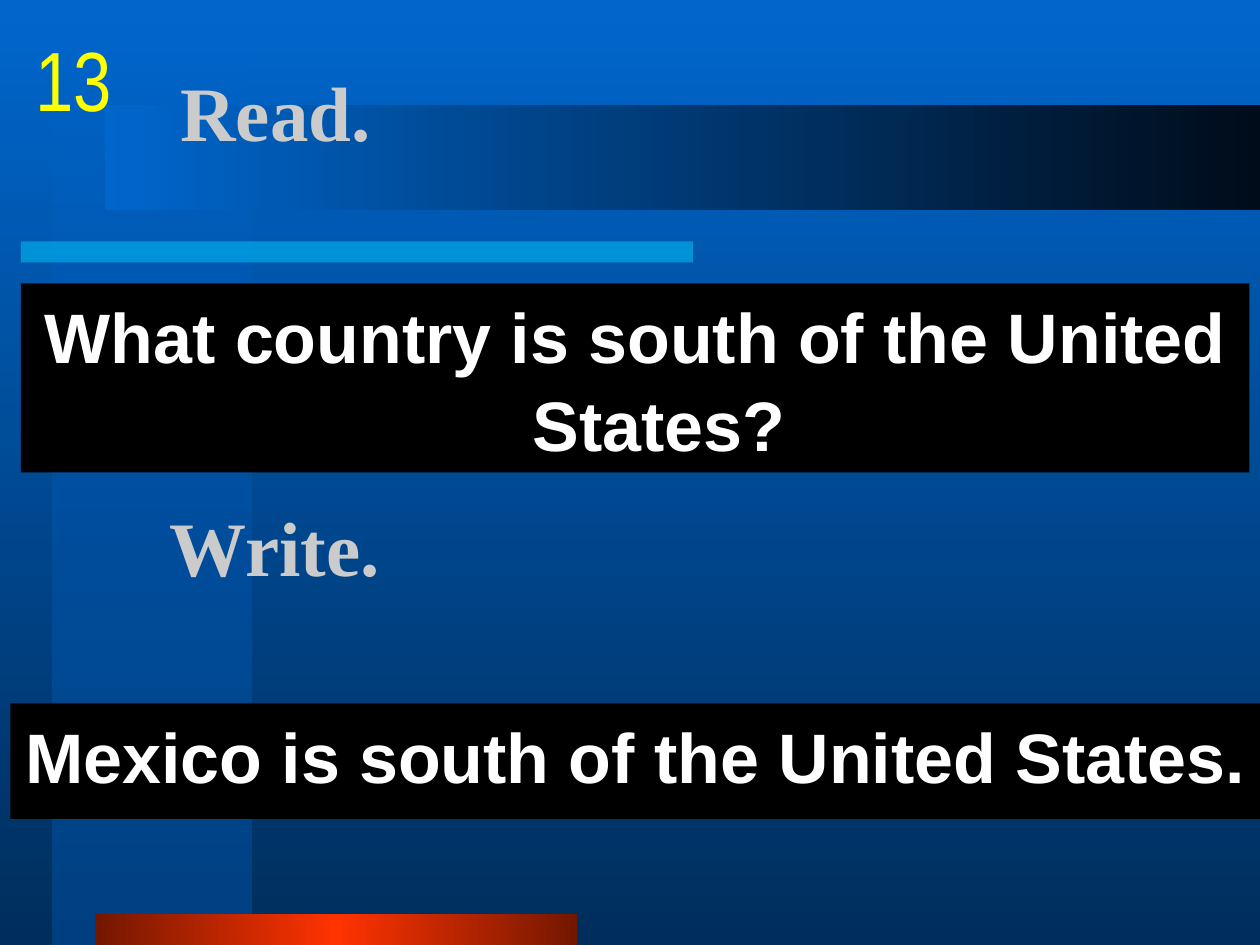
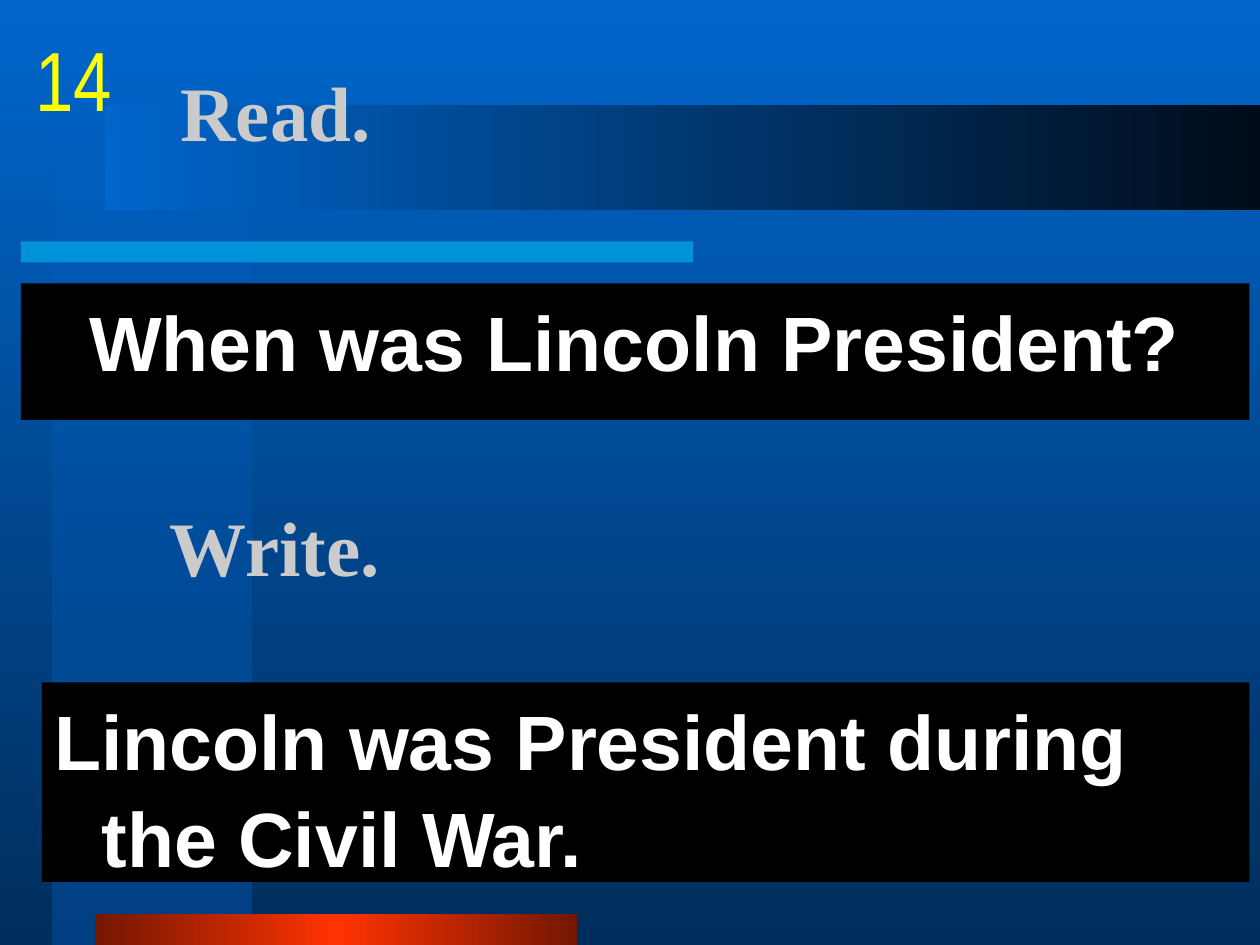
from copy import deepcopy

from lxml.etree import SubElement
from pptx import Presentation
from pptx.dml.color import RGBColor
from pptx.enum.shapes import MSO_SHAPE
from pptx.enum.text import MSO_ANCHOR, PP_ALIGN
from pptx.oxml.ns import qn
from pptx.util import Pt

SKY = RGBColor(0x00, 0x66, 0xCC)
DEEP = RGBColor(0x00, 0x2E, 0x5C)
RAIL_END = RGBColor(0x00, 0x40, 0x82)
NIGHT = RGBColor(0x00, 0x0C, 0x1A)
CYAN = RGBColor(0x00, 0xCC, 0xFF)
RED = RGBColor(0xFF, 0x33, 0x00)
DARK_RED = RGBColor(0x73, 0x17, 0x00)
BLACK = RGBColor(0x00, 0x00, 0x00)
WHITE = RGBColor(0xFF, 0xFF, 0xFF)
SILVER = RGBColor(0xCB, 0xCB, 0xCB)
YELLOW = RGBColor(0xFF, 0xFF, 0x00)

WIDTH, HEIGHT = 720, 540
HANGING = 27
RIGHTWARD, DOWNWARD = 0, 270

# Boxes are (left, top, width, height) in points
READ_BOX = (96, 18, 612, 90)
WRITE_BOX = (90, 252, 612, 120)
NUMBER_BOX = (12, 12, 60, 60)

CARDS = [
    dict(number="13", size=40,
         question="What country is south of the United States?",
         question_box=(12, 162, 702, 108),
         answer="Mexico is south of the United States.",
         answer_box=(6, 402, 714, 66), answer_align=PP_ALIGN.CENTER),
    dict(number="14", size=44,
         question="When was Lincoln President?",
         question_box=(12, 162, 702, 78),
         answer="Lincoln was President during the Civil War.",
         answer_box=(24, 390, 690, 114), answer_align=PP_ALIGN.LEFT),
]


def set_gradient(fill, colors, angle):
    """Spread the colours evenly along the given direction."""
    fill.gradient()
    fill.gradient_angle = angle
    stops = fill.gradient_stops
    if len(colors) > 2:
        stop_list = stops[0]._gs.getparent()
        for _ in colors[2:]:
            stop_list.append(deepcopy(stop_list[0]))
        stops = fill.gradient_stops
    for i, (stop, color) in enumerate(zip(stops, colors)):
        stop.color.rgb = color
        stop.position = i / (len(colors) - 1)


def make_half_clear(shape):
    """Give the first colour of the shape's fill 50% opacity."""
    color = next(shape._element.spPr.iter(qn("a:srgbClr")))
    SubElement(color, qn("a:alpha"), val="50000")


def add_panel(slide, box):
    panel = slide.shapes.add_shape(MSO_SHAPE.RECTANGLE, *map(Pt, box))
    panel.shadow.inherit = False
    panel.line.fill.background()
    return panel


def write_text(shape, text, font_name, size, color, bold=False,
               align=PP_ALIGN.LEFT, anchor=MSO_ANCHOR.TOP, wrap=True):
    frame = shape.text_frame
    frame.word_wrap = wrap
    frame.vertical_anchor = anchor
    paragraph = frame.paragraphs[0]
    paragraph.text = text
    paragraph.alignment = align
    font = paragraph.font
    font.name, font.size, font.bold = font_name, Pt(size), bold
    font.color.rgb = color
    return paragraph


def add_backdrop(slide):
    set_gradient(slide.background.fill, [SKY, DEEP], DOWNWARD)
    # Vertical rail
    rail = add_panel(slide, (30, 0, 114, HEIGHT))
    set_gradient(rail.fill, [SKY, RAIL_END], DOWNWARD)
    make_half_clear(rail)
    # Cyan rule
    rule = add_panel(slide, (12, 138, 384, 12))
    rule.fill.solid()
    rule.fill.fore_color.rgb = CYAN
    make_half_clear(rule)
    # Red foot and title band
    foot = add_panel(slide, (54, 522, 276, 18))
    set_gradient(foot.fill, [DARK_RED, RED, DARK_RED], RIGHTWARD)
    band = add_panel(slide, (60, 60, 660, 60))
    set_gradient(band.fill, [SKY, NIGHT], RIGHTWARD)


def add_heading(slide, box, text):
    heading = slide.shapes.add_textbox(*map(Pt, box))
    write_text(heading, text, "Times New Roman", 44, SILVER, bold=True,
               anchor=MSO_ANCHOR.MIDDLE)


def add_sentence(slide, box, text, size, align):
    sentence = add_panel(slide, box)
    sentence.fill.solid()
    sentence.fill.fore_color.rgb = BLACK
    paragraph = write_text(sentence, text, "Arial", size, WHITE, bold=True,
                           align=align)
    paragraph.line_spacing = 1.05
    paragraph.space_before = Pt(2)
    # Hanging indent
    properties = paragraph._p.get_or_add_pPr()
    properties.set("marL", str(Pt(HANGING)))
    properties.set("indent", str(-Pt(HANGING)))


def add_number(slide, box, text):
    number = slide.shapes.add_textbox(*map(Pt, box))
    write_text(number, text, "Arial Narrow", 48, YELLOW,
               align=PP_ALIGN.CENTER, wrap=False)


def add_card(slide, card):
    add_backdrop(slide)
    add_heading(slide, READ_BOX, "Read.")
    add_sentence(slide, card["question_box"], card["question"], card["size"],
                 PP_ALIGN.CENTER)
    add_heading(slide, WRITE_BOX, "Write.")
    add_sentence(slide, card["answer_box"], card["answer"], card["size"],
                 card["answer_align"])
    add_number(slide, NUMBER_BOX, card["number"])


def main():
    deck = Presentation()
    deck.slide_width, deck.slide_height = Pt(WIDTH), Pt(HEIGHT)
    blank = deck.slide_layouts[6]
    for card in CARDS:
        add_card(deck.slides.add_slide(blank), card)
    deck.save("out.pptx")


if __name__ == "__main__":
    main()
